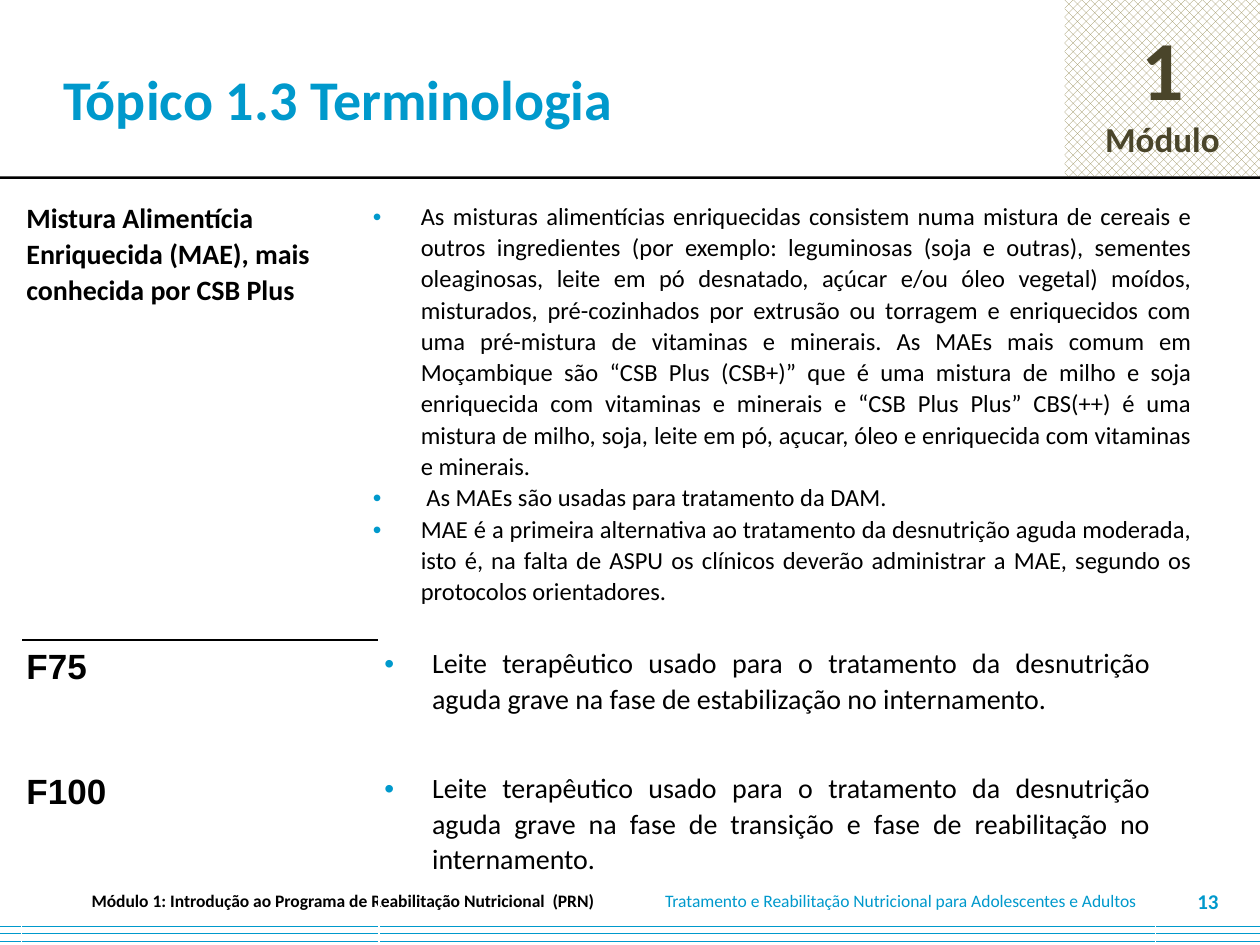
from dataclasses import dataclass
from lxml.etree import SubElement
from pptx import Presentation
from pptx.dml.color import RGBColor
from pptx.enum.dml import MSO_PATTERN
from pptx.enum.shapes import MSO_SHAPE
from pptx.enum.text import MSO_ANCHOR, PP_ALIGN
from pptx.oxml.ns import qn
from pptx.util import Inches, Pt


@dataclass(frozen=True)
class Theme:
    blue: str = "0099CC"
    black: str = "000000"
    white: str = "FFFFFF"
    olive: str = "4A452A"
    sand: str = "948A54"
    font: str = "Calibri"
    label: str = "Arial"
    title: int = 32
    digit: int = 48
    head: int = 20
    body: int = 16
    dense: int = 14
    page: int = 12
    foot: int = 10


theme = Theme()

MIX = [
    "As misturas alimentícias enriquecidas consistem numa mistura de cereais e outros "
    "ingredientes (por exemplo: leguminosas (soja e outras), sementes oleaginosas, leite em pó "
    "desnatado, açúcar e/ou óleo vegetal) moídos, misturados, pré-cozinhados por extrusão ou "
    "torragem e enriquecidos com uma pré-mistura de vitaminas e minerais. As MAEs mais comum em "
    "Moçambique são “CSB Plus (CSB+)” que é uma mistura de milho e soja enriquecida com "
    "vitaminas e minerais e “CSB Plus Plus” CBS(++) é uma mistura de milho, soja, leite em pó, "
    "açucar, óleo e enriquecida com vitaminas e minerais.",
    " As MAEs são usadas para tratamento da DAM.",
    "MAE é a primeira alternativa ao tratamento da desnutrição aguda moderada, isto é, na falta "
    "de ASPU os clínicos deverão administrar a MAE, segundo os protocolos orientadores.",
]
MILK = "Leite terapêutico usado para o tratamento da desnutrição aguda grave na fase de "
MILKS = [
    ("F75", 0.99, MILK + "estabilização no internamento."),
    ("F100", 1.54, MILK + "transição e fase de reabilitação no internamento."),
]


def rgb(code):
    return RGBColor.from_string(code)


def style(para, size, color, bold=False, align=PP_ALIGN.LEFT, font=theme.font):
    para.alignment = align
    for run in para.runs:
        run.font.size = Pt(size)
        run.font.bold = bold
        run.font.name = font
        run.font.color.rgb = rgb(color)


def inset(item, left, top, right, low):
    item.margin_left, item.margin_top = Inches(left), Inches(top)
    item.margin_right, item.margin_bottom = Inches(right), Inches(low)


def add_text(slide, box, text, size, color, wrap=True, pad=(0.1, 0.05, 0.1, 0.05), **look):
    frame = slide.shapes.add_textbox(*map(Inches, box)).text_frame
    frame.word_wrap = wrap
    frame.vertical_anchor = MSO_ANCHOR.MIDDLE
    inset(frame, *pad)
    frame.text = text
    style(frame.paragraphs[0], size, color, **look)


def add_block(slide, box, color, pattern=None):
    shape = slide.shapes.add_shape(MSO_SHAPE.RECTANGLE, *map(Inches, box))
    shape.shadow.inherit = False
    shape.line.fill.background()
    if pattern is None:
        shape.fill.solid()
    else:
        shape.fill.patterned()
        shape.fill.pattern = pattern
        shape.fill.back_color.rgb = rgb(theme.white)
    shape.fill.fore_color.rgb = rgb(color)
    return shape


def add_header(slide, box):
    x, y, w, h = box
    tab = 1.55
    badge = add_block(slide, (x + w - tab, y, tab, h), theme.sand, MSO_PATTERN.PERCENT_50)
    frame = badge.text_frame
    frame.vertical_anchor = MSO_ANCHOR.MIDDLE
    frame.text = "1\nMódulo"
    for para, size in zip(frame.paragraphs, (theme.digit, theme.head)):
        style(para, size, theme.olive, True, PP_ALIGN.CENTER)
    add_block(slide, (x, y + h, w, 0.02), theme.black)
    add_text(slide, (x, y, 8.58, h + 0.15), "Tópico 1.3 Terminologia", theme.title, theme.blue,
             pad=(0.5, 0.05, 0.1, 0.05), bold=True)


def add_footer(slide, box):
    x, y, w, h = box
    add_block(slide, (x, y + 0.29, w, h - 0.29), theme.blue, MSO_PATTERN.DASHED_HORIZONTAL)
    add_text(slide, (x + 0.29, y + 0.05, 4.86, 0.2),
             "Módulo 1: Introdução ao Programa de Reabilitação Nutricional  (PRN)",
             theme.foot, theme.black, wrap=False, bold=True, align=PP_ALIGN.CENTER)
    add_text(slide, (x + 5.18, y + 0.05, 4.05, 0.2),
             "Tratamento e Reabilitação Nutricional para Adolescentes e Adultos",
             theme.foot, theme.blue, wrap=False)
    add_text(slide, (x + w - 0.73, y, 0.5, 0.3), "13", theme.page, theme.blue,
             bold=True, align=PP_ALIGN.RIGHT)


def add_edges(cell, top):
    props = cell._tc.get_or_add_tcPr()
    for side in "LRTB":
        line = SubElement(props, qn(f"a:ln{side}"), w=str(Pt(1)))
        fill = SubElement(line, qn("a:solidFill"))
        SubElement(fill, qn("a:srgbClr"), val=top if side == "T" else theme.white)


def add_bullet(para):
    props = para._p.get_or_add_pPr()
    props.set("marL", str(Inches(0.38)))
    props.set("indent", str(-Inches(0.38)))
    color = SubElement(props, qn("a:buClr"))
    SubElement(color, qn("a:srgbClr"), val=theme.blue)
    SubElement(props, qn("a:buFont"), typeface=theme.label)
    SubElement(props, qn("a:buChar"), char="•")


def add_grid(slide, box, cols, rows):
    shape = slide.shapes.add_table(len(rows), len(cols), *map(Inches, box))
    table = shape.table
    table.first_row = table.horz_banding = False
    for col, width in zip(table.columns, cols):
        col.width = Inches(width)
    for row, height in zip(table.rows, rows):
        row.height = Inches(height)
    return table


def fill_cell(cell, text, top=theme.white):
    add_edges(cell, top)
    cell.fill.background()
    inset(cell, 0.04, 0.04, 0.04, 0.04)
    cell.text_frame.text = text
    for para in cell.text_frame.paragraphs:
        para.line_spacing = 1.05
    return cell.text_frame.paragraphs


def fill_notes(cell, text, size):
    for para in fill_cell(cell, text):
        style(para, size, theme.black, align=PP_ALIGN.JUSTIFY)
        add_bullet(para)


def add_mix(slide, box):
    table = add_grid(slide, box, (2.75, box[2] - 2.75), (box[3],))
    term = "Mistura Alimentícia Enriquecida (MAE), mais conhecida por CSB Plus"
    style(fill_cell(table.cell(0, 0), term)[0], theme.body, theme.black, True)
    fill_notes(table.cell(0, 1), "\n".join(MIX), theme.dense)


def add_milks(slide, box):
    rows = [height for _, height, _ in MILKS]
    table = add_grid(slide, box, (2.84, box[2] - 2.84), rows)
    for row, (name, _, note) in enumerate(MILKS):
        top = theme.white if row else theme.black
        para = fill_cell(table.cell(row, 0), name, top)[0]
        para.line_spacing = 1.07
        para.space_after = Pt(8)
        style(para, theme.head, theme.black, True, PP_ALIGN.JUSTIFY, theme.label)
        fill_notes(table.cell(row, 1), note, theme.body)


def main():
    deck = Presentation()
    deck.slide_width, deck.slide_height = Inches(10), Inches(7.5)
    slide = deck.slides.add_slide(deck.slide_layouts[6])
    add_header(slide, (0, 0, 10, 1.4))
    add_footer(slide, (0, 7, 10, 0.5))
    add_milks(slide, (0.17, 5.08, 9, 2.53))
    add_mix(slide, (0.17, 1.55, 9.33, 3.44))
    deck.save("out.pptx")


if __name__ == "__main__":
    main()
